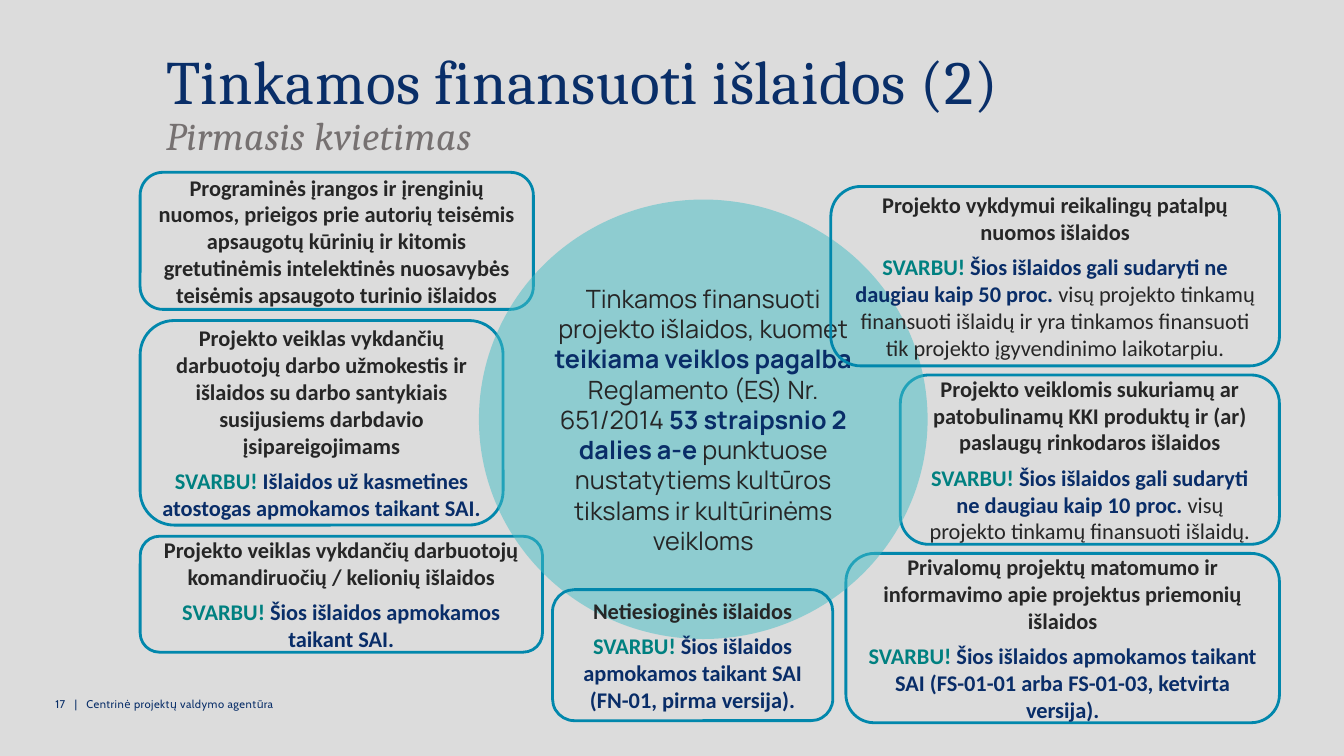
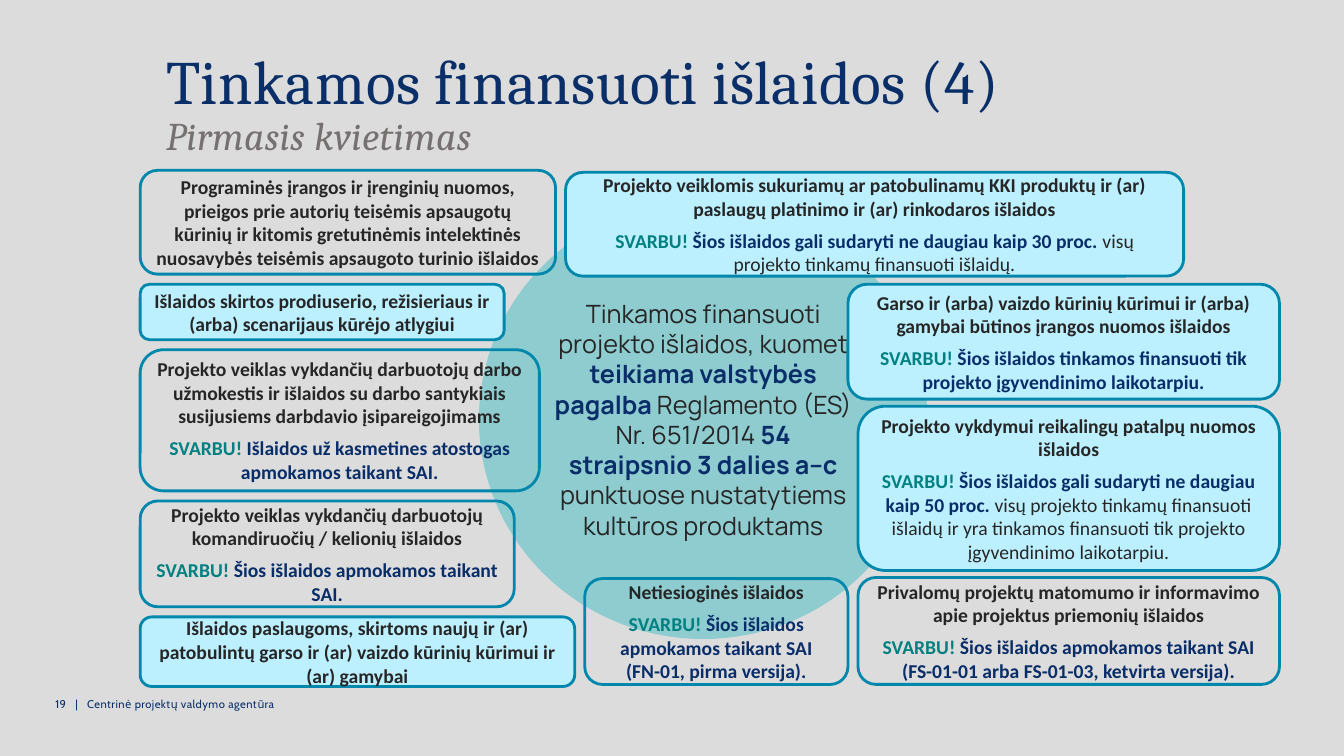
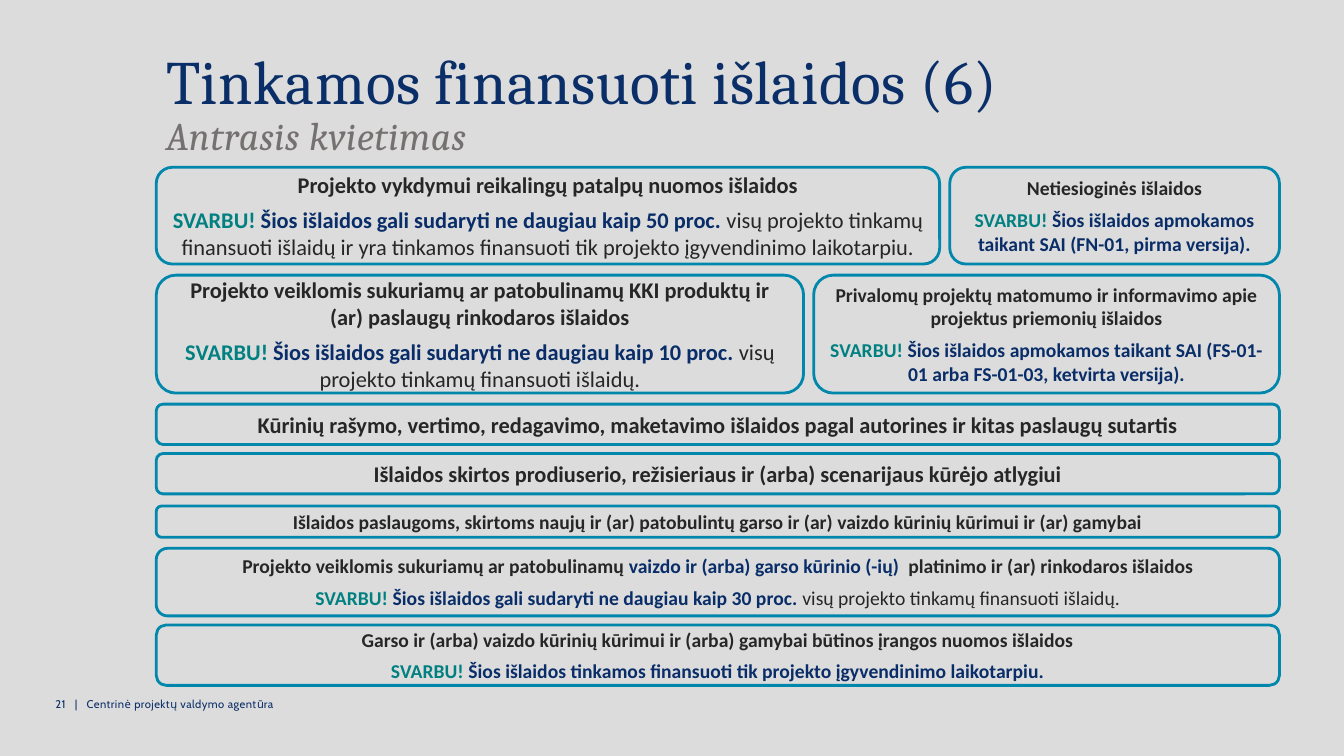
import pptx
import pptx.util
import pptx.dml.color
import pptx.enum.shapes
import pptx.enum.text
import pptx.oxml.ns
import lxml.etree

Inches = pptx.util.Inches
Pt = pptx.util.Pt
RGB = pptx.dml.color.RGBColor
SHAPE = pptx.enum.shapes.MSO_SHAPE
CENTER = pptx.enum.text.PP_ALIGN.CENTER
MIDDLE = pptx.enum.text.MSO_ANCHOR.MIDDLE

PAPER = RGB(0xDC, 0xDC, 0xDC)
TITLE_BLUE = RGB(0x09, 0x2E, 0x68)
NAVY = RGB(0x09, 0x2D, 0x68)
GRAY = RGB(0x76, 0x71, 0x71)
INK = RGB(0x26, 0x26, 0x26)
GREEN = RGB(0x00, 0x80, 0x80)
OUTLINE = RGB(0x01, 0x87, 0xAC)
PALE = RGB(0xBC, 0xF0, 0xFF)
TEAL = RGB(0x42, 0xBD, 0xC6)

LEFT, RIGHT = 1.39, 12.69
ROW_LEFT = 1.55
CIRCLE = (4.75, 1.98, 4.45, 4.36)
AGENCY = "Centrinė projektų valdymo agentūra"
SHARE = "Šios išlaidos gali sudaryti ne daugiau kaip {} proc."
OF_COSTS = " visų projekto tinkamų finansuoti išlaidų"

TOPICS = {
    "travel": ("Projekto veiklas vykdančių darbuotojų komandiruočių / kelionių išlaidos",
               "Šios išlaidos apmokamos taikant SAI."),
    "software": ("Programinės įrangos ir įrenginių nuomos, prieigos prie autorių teisėmis apsaugotų "
                 "kūrinių ir kitomis gretutinėmis intelektinės nuosavybės teisėmis apsaugoto turinio išlaidos",),
    "wages": ("Projekto veiklas vykdančių darbuotojų darbo užmokestis ir išlaidos su darbo santykiais "
              "susijusiems darbdavio įsipareigojimams",
              "Išlaidos už kasmetines atostogas apmokamos taikant SAI."),
    "marketing": ("Projekto veiklomis sukuriamų ar patobulinamų KKI produktų ir (ar) paslaugų rinkodaros išlaidos",
                  SHARE.format(10), OF_COSTS + "."),
    "distribution": ("Projekto veiklomis sukuriamų ar patobulinamų KKI produktų ir (ar) paslaugų "
                     "platinimo ir (ar) rinkodaros išlaidos",
                     SHARE.format(30), OF_COSTS + "."),
    "av distribution": (("Projekto veiklomis sukuriamų ar patobulinamų ",
                         "vaizdo ir (arba) garso kūrinio (-ių) ",
                         " platinimo ir (ar) rinkodaros išlaidos"),
                        SHARE.format(30), OF_COSTS + "."),
    "visibility": ("Privalomų projektų matomumo ir informavimo apie projektus priemonių išlaidos",
                   "Šios išlaidos apmokamos taikant SAI (FS-01-01 arba FS-01-03, ketvirta versija)."),
    "indirect": ("Netiesioginės išlaidos",
                 "Šios išlaidos apmokamos taikant SAI (FN-01, pirma versija)."),
    "premises": ("Projekto vykdymui reikalingų patalpų nuomos išlaidos",
                 SHARE.format(50),
                 OF_COSTS + " ir yra tinkamos finansuoti tik projekto įgyvendinimo laikotarpiu."),
    "producer": ("Išlaidos skirtos prodiuserio, režisieriaus ir (arba) scenarijaus kūrėjo atlygiui",),
    "services": ("Išlaidos paslaugoms, skirtoms naujų ir (ar) patobulintų garso ir (ar) vaizdo kūrinių "
                 "kūrimui ir (ar) gamybai",),
    "equipment": ("Garso ir (arba) vaizdo kūrinių kūrimui ir (arba) gamybai būtinos įrangos nuomos išlaidos",
                  "Šios išlaidos tinkamos finansuoti tik projekto įgyvendinimo laikotarpiu."),
    "writing": ("Kūrinių rašymo, vertimo, redagavimo, maketavimo išlaidos pagal autorines ir kitas "
                "paslaugų sutartis",),
}

CIRCLE_SLIDES = [
    {"number": 17, "part": 2, "call": "Pirmasis kvietimas", "size": 16,
     "circle": ("veiklos", "53 straipsnio 2 dalies a-e ",
                "punktuose nustatytiems kultūros tikslams ir kultūrinėms veikloms"),
     "left": (1.71, 0.11, [("software", 3.9, 1.36), ("wages", 3.6, 2.03), ("travel", 3.99, 1.15)]),
     "right": (1.85, 0.09, [("premises", 4.45, 1.78), ("marketing", 3.76, 1.68), ("visibility", 4.3, 1.68)]),
     "middle": [("indirect", 5.48, 5.85, 2.78, 1.3)],
     "under": {"software", "wages", "travel", "marketing", "visibility"}, "pale": set()},
    {"number": 19, "part": 4, "call": "Pirmasis kvietimas", "size": 14,
     "circle": ("valstybės", "54 straipsnio 3 dalies a–c ",
                "punktuose nustatytiems kultūros produktams"),
     "left": (1.69, 0.1, [("software", 4.12, 1.03), ("producer", 3.61, 0.55), ("wages", 3.96, 1.4),
                          ("travel", 3.71, 1.05), ("services", 4.31, 0.69)]),
     "right": (2.82, 0.07, [("equipment", 4.28, 1.14), ("premises", 4.18, 1.63), ("visibility", 4.18, 1.06)]),
     "middle": [("distribution", 5.61, 1.71, 6.13, 1.03), ("indirect", 5.8, 5.74, 2.61, 1.05)],
     "under": set(), "pale": {"distribution", "producer", "services", "equipment", "premises"}},
]

ROW_SLIDE = {"number": 21, "part": 6, "call": "Antrasis kvietimas"}
ROW_GAP = 0.1
ROWS = [
    (1.66, 0.96, [("premises", 16, 7.77), ("indirect", 14, 3.27)]),
    (2.73, 1.17, [("marketing", 16, 6.42), ("visibility", 14, 4.62)]),
    (4.01, 0.4, [("writing", 16, 11.14)]),
    (4.5, 0.4, [("producer", 16, 11.14)]),
    (5.02, 0.31, [("services", 14, 11.14)]),
    (5.44, 0.67, [("av distribution", 14, 11.14)]),
    (6.2, 0.6, [("equipment", 14, 11.14)]),
]


def add_run(paragraph, text, font, size, color, bold=False, italic=False, spacing=None):
    run = paragraph.add_run()
    run.text = text
    run.font.name = font
    run.font.size = Pt(size)
    run.font.color.rgb = color
    run.font.bold = bold
    run.font.italic = italic
    if spacing:
        run.font._element.set("spc", str(round(spacing * 100)))


def add_text_frame(slide, at):
    frame = slide.shapes.add_textbox(*map(Inches, at)).text_frame
    frame.word_wrap = True
    return frame


def start_slide(prs, number, part, call):
    slide = prs.slides.add_slide(prs.slide_layouts[6])
    heading = add_text_frame(slide, (1.55, 0.52, 11.14, 1.05))
    title, subtitle = heading.paragraphs[0], heading.add_paragraph()
    for paragraph in (title, subtitle):
        paragraph.line_spacing = 0.8
        paragraph.space_after = Pt(3)
    add_run(title, f"Tinkamos finansuoti išlaidos ({part})", "Cambria", 44, TITLE_BLUE, spacing=0.4)
    add_run(subtitle, call, "Cambria", 28, GRAY, italic=True, spacing=0.4)
    footer = add_text_frame(slide, (0.45, 6.87, 3.2, 0.4)).paragraphs[0]
    add_run(footer, f"{number}   |   {AGENCY}", "Cabin", 8, TITLE_BLUE, spacing=0.3)
    return slide


def add_panel(slide, preset, at):
    panel = slide.shapes.add_shape(preset, *map(Inches, at))
    panel.shadow.inherit = False
    frame = panel.text_frame
    frame.word_wrap = True
    frame.vertical_anchor = MIDDLE
    frame.paragraphs[0].alignment = CENTER
    return panel


def add_topic(slide, topic, at, size, pale=False):
    heading, *note = TOPICS[topic]
    box = add_panel(slide, SHAPE.ROUNDED_RECTANGLE, at)
    if pale:
        box.fill.solid()
        box.fill.fore_color.rgb = PALE
    else:
        box.fill.background()
    box.line.color.rgb = OUTLINE
    box.line.width = Pt(2)
    paragraph = box.text_frame.paragraphs[0]
    paragraph.space_after = Pt(6)
    pieces = (heading,) if isinstance(heading, str) else heading
    for piece, color in zip(pieces, (INK, NAVY, INK)):
        add_run(paragraph, piece, "Calibri", size, color, bold=True)
    if note:
        paragraph = box.text_frame.add_paragraph()
        paragraph.alignment = CENTER
        styles = ((GREEN, True), (NAVY, True), (INK, False))
        for piece, (color, bold) in zip(["SVARBU! ", *note], styles):
            add_run(paragraph, piece, "Calibri", size, color, bold)


def add_circle(slide, aid, article, purpose):
    circle = add_panel(slide, SHAPE.FLOWCHART_CONNECTOR, CIRCLE)
    circle.fill.solid()
    circle.fill.fore_color.rgb = TEAL
    circle.line.fill.background()
    color = circle._element.spPr.find(".//" + pptx.oxml.ns.qn("a:srgbClr"))
    lxml.etree.SubElement(color, pptx.oxml.ns.qn("a:alpha")).set("val", "50000")
    pieces = [("Tinkamos finansuoti projekto išlaidos, kuomet ", False),
              (f"teikiama {aid} pagalba ", True),
              ("Reglamento (ES) Nr. 651/2014 ", False),
              (article, True), (purpose, False)]
    for piece, strong in pieces:
        add_run(circle.text_frame.paragraphs[0], piece, "Manrope", 18, NAVY if strong else INK, strong)


def stack(top, gap, boxes, to_right):
    placed = {}
    for topic, width, height in boxes:
        placed[topic] = (RIGHT - width if to_right else LEFT, top, width, height)
        top += height + gap
    return placed


def build_circle_slide(prs, content):
    slide = start_slide(prs, content["number"], content["part"], content["call"])
    places = stack(*content["left"], False) | stack(*content["right"], True)
    places |= {topic: at for topic, *at in content["middle"]}

    def add_layer(under):
        for topic, at in places.items():
            if (topic in content["under"]) == under:
                add_topic(slide, topic, at, content["size"], topic in content["pale"])

    add_layer(True)
    add_circle(slide, *content["circle"])
    add_layer(False)


def build_row_slide(prs):
    slide = start_slide(prs, **ROW_SLIDE)
    for top, height, boxes in ROWS:
        left = ROW_LEFT
        for topic, size, width in boxes:
            add_topic(slide, topic, (left, top, width, height), size)
            left += width + ROW_GAP


def main():
    prs = pptx.Presentation()
    prs.slide_width, prs.slide_height = Inches(13.33), Inches(7.5)
    background = prs.slide_master.background.fill
    background.solid()
    background.fore_color.rgb = PAPER
    for content in CIRCLE_SLIDES:
        build_circle_slide(prs, content)
    build_row_slide(prs)
    prs.save("out.pptx")


if __name__ == "__main__":
    main()
